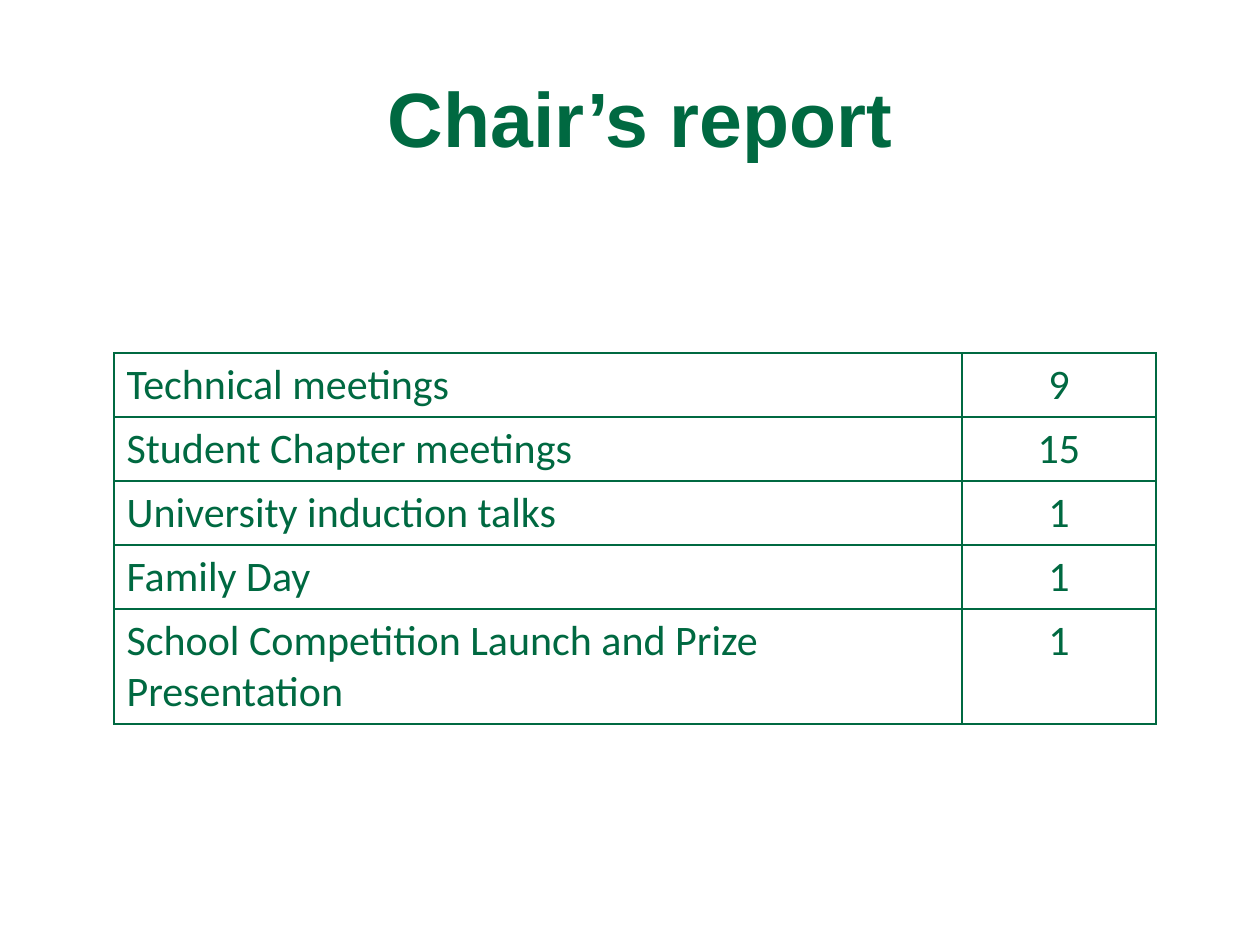
from dataclasses import dataclass
from lxml import etree
from pptx import Presentation
from pptx import util as u
from pptx.dml.color import RGBColor
from pptx.enum import text
from pptx.oxml.ns import qn

# Content
TITLE = "Chair’s report"
ROWS = [
    ("Technical meetings", "9"),
    ("Student Chapter meetings", "15"),
    ("University induction talks", "1"),
    ("Family Day", "1"),
    ("School Competition Launch and Prize Presentation", "1"),
]

# Layout in px
SCALE = u.Inches(1) / 126
TITLE_BOX = (323, 38, 635, 157)
TABLE_AT = (114, 353)
COLS = (848, 194)
LINE_H, TALL_H = 64, 115


@dataclass
class Theme:
    green: str = "006941"
    head: str = "Arial"
    body: str = "Calibri"
    head_size: int = 44
    body_size: int = 24
    border: int = 1


theme = Theme()


def px(n):
    return u.Emu(round(n * SCALE))


def style(par, face, size, align, bold=False):
    par.alignment = align
    for run in par.runs:
        font = run.font
        font.name, font.size, font.bold = face, u.Pt(size), bold
        font.color.rgb = RGBColor.from_string(theme.green)


def outline(cell):
    props = cell._tc.get_or_add_tcPr()
    for spot, side in enumerate(("lnL", "lnR", "lnT", "lnB")):
        line = etree.Element(qn("a:" + side), w=str(u.Pt(theme.border)))
        fill = etree.SubElement(line, qn("a:solidFill"))
        etree.SubElement(fill, qn("a:srgbClr"), val=theme.green)
        props.insert(spot, line)


def add_title(slide):
    title = slide.shapes.title
    title.left, title.top, title.width, title.height = map(px, TITLE_BOX)
    frame = title.text_frame
    frame.text = TITLE
    frame.vertical_anchor = text.MSO_ANCHOR.MIDDLE
    style(frame.paragraphs[0], theme.head, theme.head_size,
          text.PP_ALIGN.CENTER, True)


def add_counts(slide):
    # The last label wraps to two lines
    heights = [LINE_H] * (len(ROWS) - 1) + [TALL_H]
    box = map(px, (*TABLE_AT, sum(COLS), sum(heights)))
    table = slide.shapes.add_table(len(ROWS), len(COLS), *box).table
    table.first_row = table.horz_banding = False
    for col, width in zip(table.columns, COLS):
        col.width = px(width)
    aligns = (text.PP_ALIGN.LEFT, text.PP_ALIGN.CENTER)
    for row, high, words in zip(table.rows, heights, ROWS):
        row.height = px(high)
        for cell, word, align in zip(row.cells, words, aligns):
            cell.text_frame.text = word
            cell.fill.background()
            outline(cell)
            style(cell.text_frame.paragraphs[0], theme.body,
                  theme.body_size, align)


def main():
    deck = Presentation()
    deck.slide_width, deck.slide_height = px(1260), px(945)
    slide = deck.slides.add_slide(deck.slide_layouts[5])
    add_title(slide)
    add_counts(slide)
    deck.save("out.pptx")


if __name__ == "__main__":
    main()
